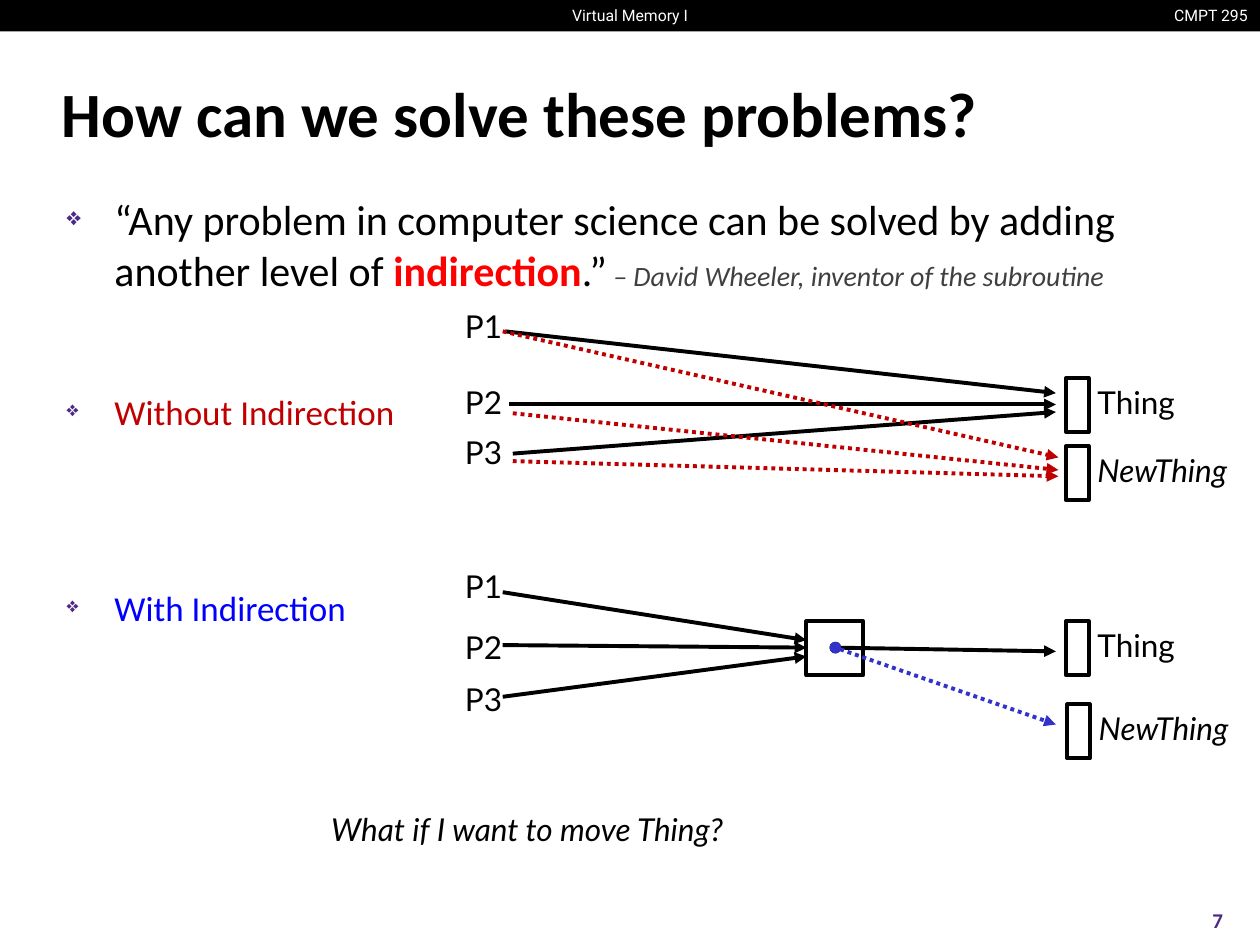
from lxml.etree import SubElement
from pptx import Presentation
from pptx.dml.color import RGBColor
from pptx.enum.dml import MSO_LINE
from pptx.enum.shapes import MSO_CONNECTOR, MSO_SHAPE
from pptx.enum.text import MSO_ANCHOR, MSO_AUTO_SIZE, PP_ALIGN
from pptx.oxml.ns import qn
from pptx.util import Inches, Pt

BLACK = RGBColor(0x00, 0x00, 0x00)
WHITE = RGBColor(0xFF, 0xFF, 0xFF)
RED = RGBColor(0xFF, 0x00, 0x00)
DARK_RED = RGBColor(0xC0, 0x00, 0x00)
BLUE = RGBColor(0x00, 0x00, 0xFF)
ARROW_BLUE = RGBColor(0x33, 0x33, 0xCC)
GRAY = RGBColor(0x40, 0x40, 0x40)
PURPLE = RGBColor(0x4B, 0x2A, 0x85)

BAR = {"name": "Roboto", "size": Pt(9), "color": WHITE}
TITLE = {"name": "Calibri", "size": Pt(36), "color": BLACK, "bold": True}
QUOTE = {"name": "Calibri", "size": Pt(24), "color": BLACK}
KEYWORD = {**QUOTE, "color": RED, "bold": True}
SOURCE = {**QUOTE, "size": Pt(16), "color": GRAY, "italic": True}
WITHOUT = {**QUOTE, "size": Pt(20), "color": DARK_RED}
WITH = {**WITHOUT, "color": BLUE}
NUMBER = {**TITLE, "size": Pt(12), "color": PURPLE}
LABEL = {"name": "Lato", "size": Pt(18), "color": BLACK}
LABEL_ITALIC = {**LABEL, "italic": True}
LABEL_FRAME = {"margin_left": Inches(0.09), "margin_right": Inches(0.09),
               "margin_top": Inches(0.04), "margin_bottom": Inches(0.04)}
MIDDLE = {"vertical_anchor": MSO_ANCHOR.MIDDLE, "word_wrap": True,
          "auto_size": MSO_AUTO_SIZE.NONE}


def set_values(target, values):
    for name, value in values.items():
        setattr(target, name, value)


def add_span(para, text, style):
    span = para.add_run()
    span.text = text
    for name, value in style.items():
        if name == "color":
            span.font.color.rgb = value
        else:
            setattr(span.font, name, value)


def add_text(page, place, text, style, align=PP_ALIGN.LEFT, frame={}):
    box = page.shapes.add_textbox(*map(Inches, place))
    fit = {"word_wrap": False, "auto_size": MSO_AUTO_SIZE.SHAPE_TO_FIT_TEXT}
    set_values(box.text_frame, {**fit, **frame})
    para = box.text_frame.paragraphs[0]
    para.alignment = align
    add_span(para, text, style)


def add_title(page, text):
    title = page.shapes.title
    set_values(title, {"left": Inches(0.39), "top": Inches(0.48),
                       "width": Inches(9.19), "height": Inches(0.83)})
    set_values(title.text_frame, MIDDLE)
    para = title.text_frame.paragraphs[0]
    para.alignment = PP_ALIGN.LEFT
    add_span(para, text, TITLE)


def add_bullet(para):
    properties = para._p.get_or_add_pPr()
    properties.set("marL", str(Inches(0.38)))
    properties.set("indent", str(-Inches(0.38)))
    color = SubElement(properties, qn("a:buClr"))
    SubElement(color, qn("a:srgbClr"), val=str(PURPLE))
    SubElement(properties, qn("a:buSzPct"), val="60000")
    SubElement(properties, qn("a:buChar"), char="❖")


def add_points(page, points):
    box = page.shapes.add_textbox(*map(Inches, (0.43, 1.49, 9.15, 5.44)))
    frame = box.text_frame
    frame.word_wrap = True
    for index, (space, spans) in enumerate(points):
        para = frame.add_paragraph() if index else frame.paragraphs[0]
        para.space_before = Pt(space)
        add_bullet(para)
        for text, style in spans:
            add_span(para, text, style)


def add_bar(page):
    bar = page.shapes.add_shape(MSO_SHAPE.RECTANGLE, 0, 0, Inches(10), Inches(0.25))
    bar.shadow.inherit = False
    bar.fill.solid()
    bar.fill.fore_color.rgb = BLACK
    bar.line.fill.background()
    add_text(page, (9.19, 0, 0.81, 0.25), "CMPT 295", BAR, PP_ALIGN.RIGHT)
    add_text(page, (4.42, 0, 1.16, 0.25), "Virtual Memory I", BAR, PP_ALIGN.CENTER)


def add_cell(page, left, top, width=0.18):
    cell = page.shapes.add_shape(MSO_SHAPE.RECTANGLE,
                                 *map(Inches, (left, top, width, 0.43)))
    cell.shadow.inherit = False
    cell.fill.background()
    cell.line.color.rgb = BLACK
    cell.line.width = Pt(2.25)


def add_arrow(page, start, end, color=BLACK, dotted=False, dot_start=False):
    arrow = page.shapes.add_connector(MSO_CONNECTOR.STRAIGHT,
                                      *map(Inches, (*start, *end)))
    arrow.line.color.rgb = color
    arrow.line.width = Pt(2.25)
    if dotted:
        arrow.line.dash_style = MSO_LINE.ROUND_DOT
    outline = arrow.line._get_or_add_ln()
    if dot_start:
        SubElement(outline, qn("a:headEnd"), type="oval")
    SubElement(outline, qn("a:tailEnd"), type="triangle")
    SubElement(arrow._element.spPr, qn("a:effectLst"))


def add_pointers(page, tops):
    for number, top in enumerate(tops, 1):
        add_text(page, (3.6, top, 0.48, 0.39), f"P{number}", LABEL, frame=LABEL_FRAME)


def add_thing(page, left, top, text, width, style):
    add_cell(page, left, top)
    add_text(page, (left + 0.16, top, width, 0.39), text, style, frame=LABEL_FRAME)


def add_things(page, top, new_left, new_top):
    add_thing(page, 8.46, top, "Thing", 0.81, LABEL)
    add_thing(page, new_left, new_top, "NewThing", 1.27, LABEL_ITALIC)


def add_direct_diagram(page):
    add_things(page, 3, 8.46, 3.54)
    add_pointers(page, (2.4, 3, 3.4))
    for left, top, end in ((4.01, 2.63, 3.12), (4.04, 3.21, 3.21), (4.07, 3.6, 3.27)):
        add_arrow(page, (left, top), (8.38, end))
    for left, top, end in ((3.99, 2.63, 3.63), (4.07, 3.28, 3.73), (4.07, 3.66, 3.78)):
        add_arrow(page, (left, top), (8.4, end), DARK_RED, dotted=True)


def add_indirect_diagram(page):
    add_things(page, 4.93, 8.47, 5.59)
    add_pointers(page, (4.46, 4.94, 5.36))
    add_cell(page, 6.4, 4.93, 0.45)
    for top, end in ((4.7, 5.08), (5.12, 5.14), (5.53, 5.21)):
        add_arrow(page, (3.99, top), (6.4, end))
    add_arrow(page, (6.63, 5.14), (8.38, 5.17), dot_start=True)
    add_arrow(page, (6.63, 5.14), (8.38, 5.75), ARROW_BLUE, dotted=True, dot_start=True)


def main():
    deck = Presentation()
    deck.slide_width, deck.slide_height = Inches(10), Inches(7.5)
    page = deck.slides.add_slide(deck.slide_layouts[5])
    add_bar(page)
    add_title(page, "How can we solve these problems?")
    add_points(page, (
        (0, (("“Any problem in computer science can be solved by adding "
              "another level of ", QUOTE),
             ("indirection", KEYWORD),
             (".”", QUOTE),
             (" – David Wheeler, inventor of the subroutine", SOURCE))),
        (55, (("Without Indirection", WITHOUT),)),
        (88, (("With Indirection", WITH),)),
    ))
    add_direct_diagram(page)
    add_indirect_diagram(page)
    add_text(page, (2.53, 6.38, 4.49, 0.5), "What if I want to move Thing?", LABEL_ITALIC)
    add_text(page, (9.33, 7.1, 0.67, 0.4), "7", NUMBER, PP_ALIGN.CENTER, MIDDLE)
    deck.save("out.pptx")


if __name__ == "__main__":
    main()
